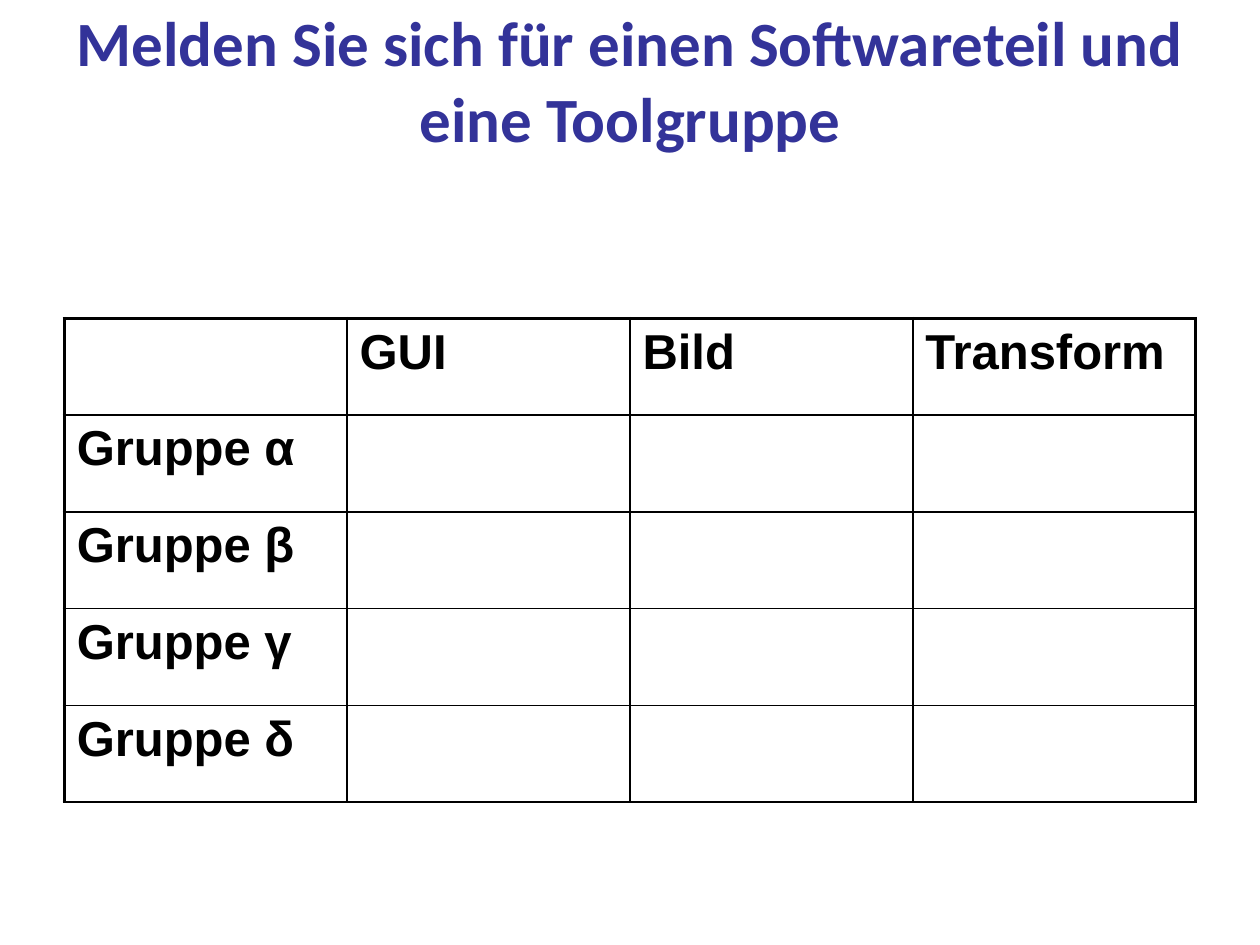
from dataclasses import dataclass

from lxml.etree import SubElement
from pptx import Presentation
from pptx.dml.color import RGBColor
from pptx.enum.text import MSO_ANCHOR, MSO_AUTO_SIZE, PP_ALIGN
from pptx.oxml.ns import qn
from pptx.util import Inches, Pt

COLORS = {"title": "333399", "ink": "000000", "paper": "FFFFFF"}
WIDTH, HEIGHT = Inches(10), Inches(7.5)
THIN, THICK = 1, 2.25
PARTS = ["GUI", "Bild", "Transform"]
GROUPS = ["α", "β", "γ", "δ"]


@dataclass(frozen=True)
class Area:
    left: float
    top: float
    width: float
    height: float

    def lengths(self) -> tuple[int, int, int, int]:
        return (int(self.left * WIDTH), int(self.top * HEIGHT),
                int(self.width * WIDTH), int(self.height * HEIGHT))


@dataclass(frozen=True)
class TextStyle:
    font: str
    size: float
    color: str


TITLE_AREA = Area(0.012, 0, 0.976, 0.168)
TABLE_AREA = Area(0.051, 0.337, 0.898, 0.512)
TITLE_STYLE = TextStyle("Calibri", 36, "title")
CELL_STYLE = TextStyle("Arial", 28, "ink")


def add_span(para, text: str, style: TextStyle) -> None:
    span = para.add_run()
    span.text = text
    span.font.name = style.font
    span.font.size = Pt(style.size)
    span.font.bold = True
    span.font.color.rgb = RGBColor.from_string(COLORS[style.color])


def add_title(page, text: str) -> None:
    title = page.shapes.title
    title.left, title.top, title.width, title.height = TITLE_AREA.lengths()
    frame = title.text_frame
    frame.word_wrap = True
    frame.auto_size = MSO_AUTO_SIZE.NONE
    frame.vertical_anchor = MSO_ANCHOR.MIDDLE
    para = frame.paragraphs[0]
    para.alignment = PP_ALIGN.CENTER
    add_span(para, text, TITLE_STYLE)


def set_borders(cell, widths: dict[str, float]) -> None:
    properties = cell._tc.get_or_add_tcPr()
    for side, width in widths.items():
        line = SubElement(properties, qn(f"a:ln{side}"), w=str(Pt(width)))
        fill = SubElement(line, qn("a:solidFill"))
        SubElement(fill, qn("a:srgbClr"), val=COLORS["ink"])


def add_grid(page, rows: list[list[str]]) -> None:
    row_count, column_count = len(rows), len(rows[0])
    left, top, width, height = TABLE_AREA.lengths()
    table = page.shapes.add_table(row_count, column_count, left, top, width, height).table
    table.first_row = table.horz_banding = False
    for row, texts in enumerate(rows):
        for column, text in enumerate(texts):
            cell = table.cell(row, column)
            set_borders(cell, {
                "L": THICK if column == 0 else THIN,
                "R": THICK if column == column_count - 1 else THIN,
                "T": THICK if row == 0 else THIN,
                "B": THIN,
            })
            cell.fill.solid()
            cell.fill.fore_color.rgb = RGBColor.from_string(COLORS["paper"])
            if text:
                add_span(cell.text_frame.paragraphs[0], text, CELL_STYLE)


def main() -> None:
    deck = Presentation()
    deck.slide_width, deck.slide_height = WIDTH, HEIGHT
    page = deck.slides.add_slide(deck.slide_layouts.get_by_name("Title Only"))
    add_title(page, "Melden Sie sich für einen Softwareteil und eine Toolgruppe")
    header = ["", *PARTS]
    body = [[f"Gruppe {letter}", *[""] * len(PARTS)] for letter in GROUPS]
    add_grid(page, [header, *body])
    deck.save("out.pptx")


if __name__ == "__main__":
    main()
